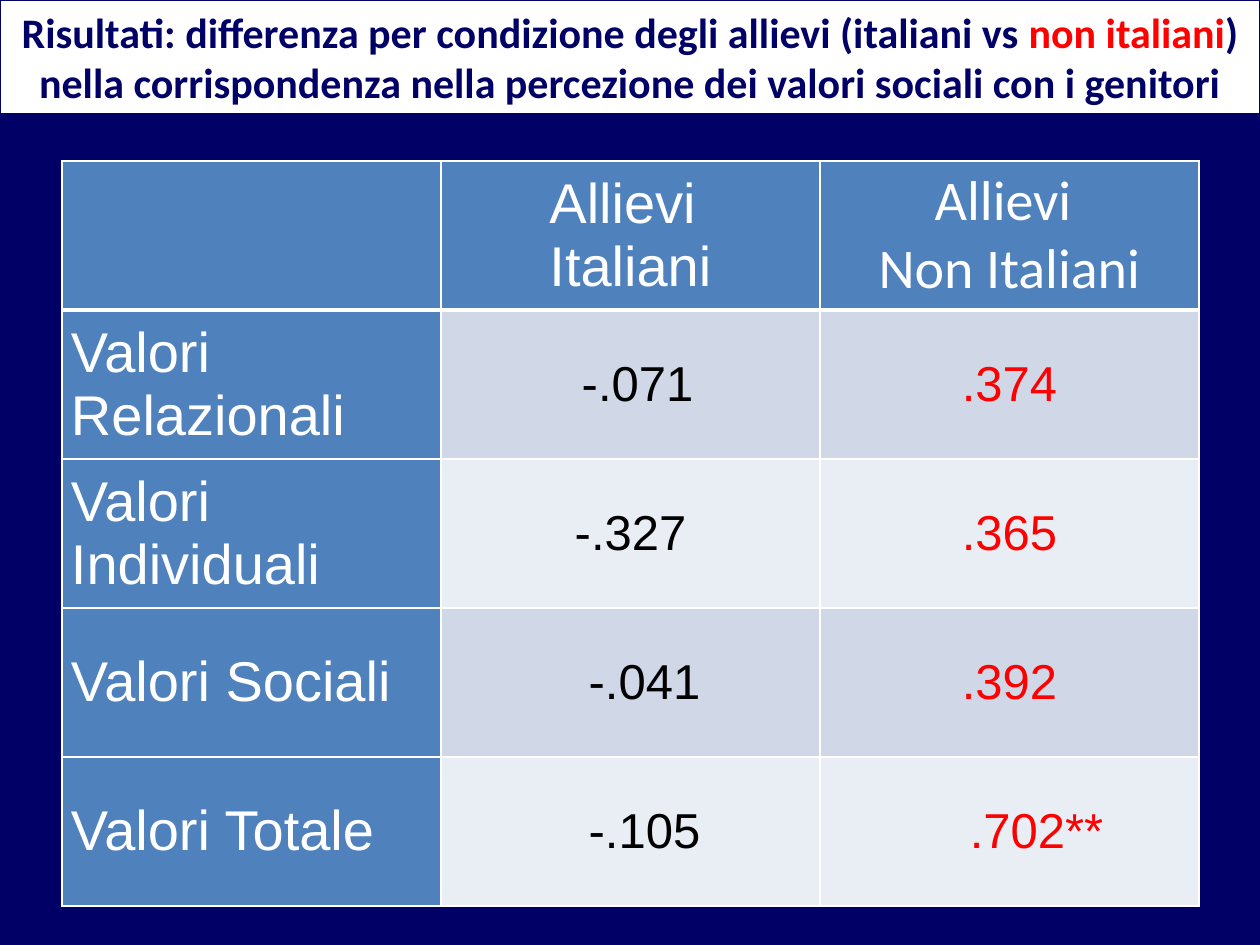
import lxml.etree
import pptx
import pptx.dml.color
import pptx.enum.shapes
import pptx.enum.text
import pptx.oxml.ns
import pptx.util

NAVY, WHITE, RED, BLACK = "000066", "FFFFFF", "FF0000", "000000"
BLUE, BANDS = "4F81BD", ("D0D8E8", "E9EDF4")
CENTER = pptx.enum.text.PP_ALIGN.CENTER
LEFT = pptx.enum.text.PP_ALIGN.LEFT
MIDDLE = pptx.enum.text.MSO_ANCHOR.MIDDLE

HEADING = {"name": "Arial", "size": pptx.util.Pt(32), "bold": False}
HEADING_CALIBRI = HEADING | {"name": "Calibri"}
VALUE = HEADING | {"size": pptx.util.Pt(28)}
TITLE = {"name": "Calibri", "size": pptx.util.Pt(24), "bold": True}


def px(length):
    return pptx.util.Emu(length * 914400 // 126)


def rgb(color):
    return pptx.dml.color.RGBColor.from_string(color)


def set_values(target, values):
    for name, value in values.items():
        setattr(target, name, value)


class SlideBuilder:
    def __init__(self, deck, background):
        self.slide = deck.slides.add_slide(deck.slide_layouts[6])
        fill = self.slide.background.fill
        fill.solid()
        fill.fore_color.rgb = rgb(background)

    def text(self, frame, paragraphs, font, align):
        for index, runs in enumerate(paragraphs):
            paragraph = frame.add_paragraph() if index else frame.paragraphs[0]
            paragraph.alignment = align
            for wording, color in runs:
                run = paragraph.add_run()
                run.text = wording
                set_values(run.font, font)
                run.font.color.rgb = rgb(color)

    def banner(self, left, top, width, height, runs):
        banner = self.slide.shapes.add_shape(
            pptx.enum.shapes.MSO_SHAPE.RECTANGLE,
            px(left), px(top), px(width), px(height))
        banner.shadow.inherit = False
        banner.fill.solid()
        banner.fill.fore_color.rgb = rgb(WHITE)
        banner.line.color.rgb = rgb(NAVY)
        banner.line.width = 0
        set_values(banner.text_frame, {"word_wrap": True, "vertical_anchor": MIDDLE})
        self.text(banner.text_frame, [runs], TITLE, CENTER)

    def table(self, left, top, column_width, row_height, rows, columns):
        table = self.slide.shapes.add_table(
            rows, columns, px(left), px(top),
            px(column_width * columns), px(row_height * rows)).table
        for column in table.columns:
            column.width = px(column_width)
        for row in table.rows:
            row.height = px(row_height)
        return table

    def borders(self, cell, widths):
        properties = cell._tc.get_or_add_tcPr()
        for side, points in widths.items():
            line = lxml.etree.SubElement(
                properties, pptx.oxml.ns.qn(f"a:ln{side}"),
                w=str(pptx.util.Pt(points)))
            fill = lxml.etree.SubElement(line, pptx.oxml.ns.qn("a:solidFill"))
            lxml.etree.SubElement(fill, pptx.oxml.ns.qn("a:srgbClr"), val=WHITE)

    def cell(self, cell, lines, fill, font, color, widths, align=CENTER, indent=0):
        self.borders(cell, widths)
        cell.fill.solid()
        cell.fill.fore_color.rgb = rgb(fill)
        set_values(cell, {"vertical_anchor": MIDDLE, "margin_left": px(9 + indent),
                          "margin_right": px(9), "margin_top": 0, "margin_bottom": 0})
        self.text(cell.text_frame, [[(line, color)] for line in lines], font, align)


def main():
    deck = pptx.Presentation()
    set_values(deck, {"slide_width": px(1260), "slide_height": px(945)})
    builder = SlideBuilder(deck, NAVY)
    builder.banner(0, 0, 1260, 114, [
        ("Risultati: differenza per condizione degli allievi (italiani vs ", NAVY),
        ("non italiani", RED),
        (") nella corrispondenza nella percezione dei valori sociali con i genitori", NAVY),
    ])

    headers = [([], HEADING), (["Allievi ", "Italiani"], HEADING),
               (["Allievi ", "Non Italiani"], HEADING_CALIBRI)]
    results = [
        ("Valori Relazionali", ("-.071", 14), (".374", 0)),
        ("Valori Individuali", ("-.327", 0), (".365", 0)),
        ("Valori Sociali", ("-.041", 28), (".392", 0)),
        ("Valori Totale", ("-.105", 28), (".702**", 54)),
    ]
    thin = {"L": 1, "R": 1, "T": 1, "B": 1}
    table = builder.table(62, 161, 379, 149, len(results) + 1, len(headers))
    for column, (lines, font) in enumerate(headers):
        builder.cell(table.cell(0, column), lines, BLUE, font, WHITE, thin | {"B": 3})
    for row, (label, *values) in enumerate(results, 1):
        widths = thin | {"T": 3 if row == 1 else 1}
        builder.cell(table.cell(row, 0), [label], BLUE, HEADING, WHITE, widths, LEFT)
        for column, ((value, indent), color) in enumerate(zip(values, (BLACK, RED)), 1):
            builder.cell(table.cell(row, column), [value], BANDS[(row - 1) % 2],
                         VALUE, color, widths, indent=indent)
    deck.save("out.pptx")


if __name__ == "__main__":
    main()
